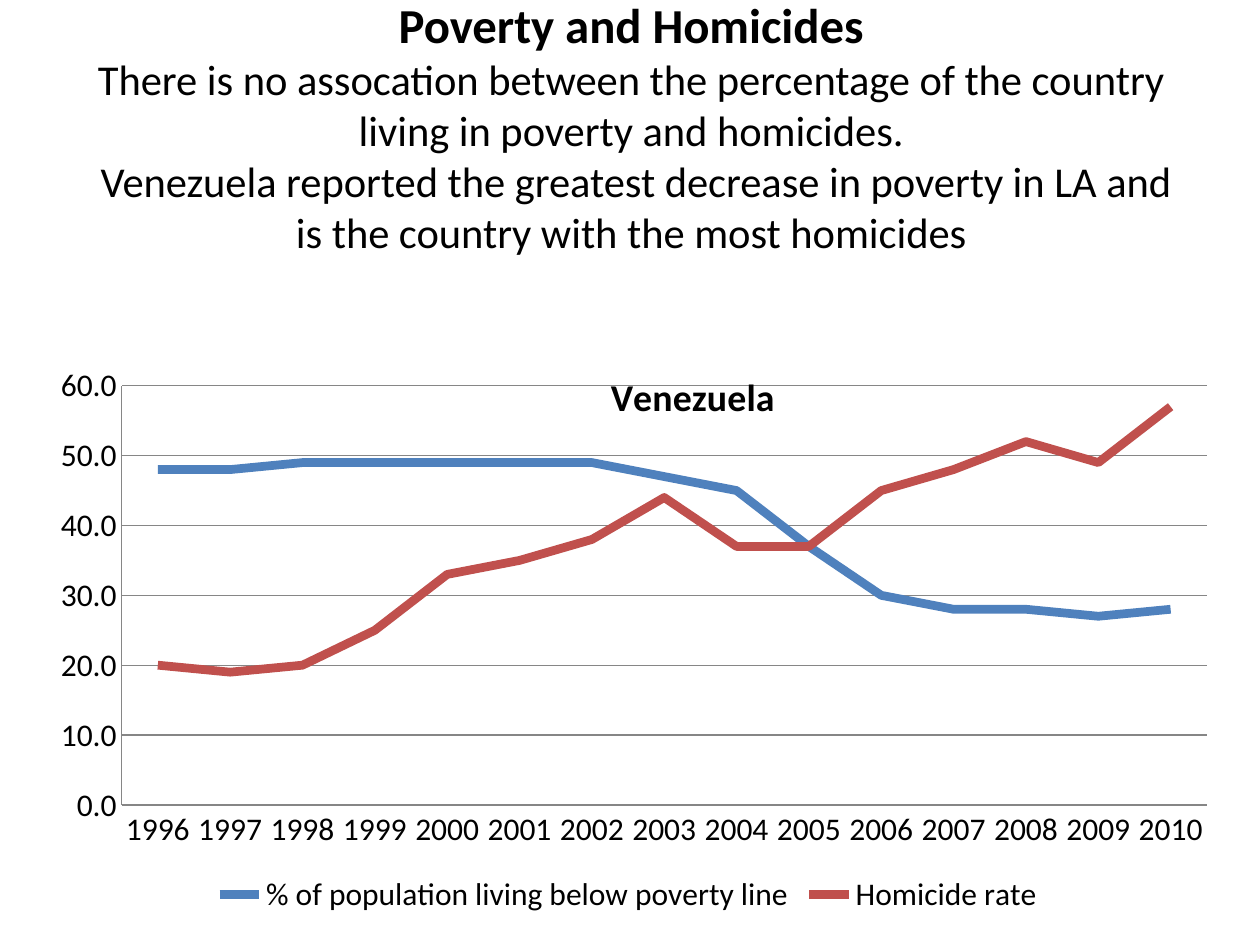
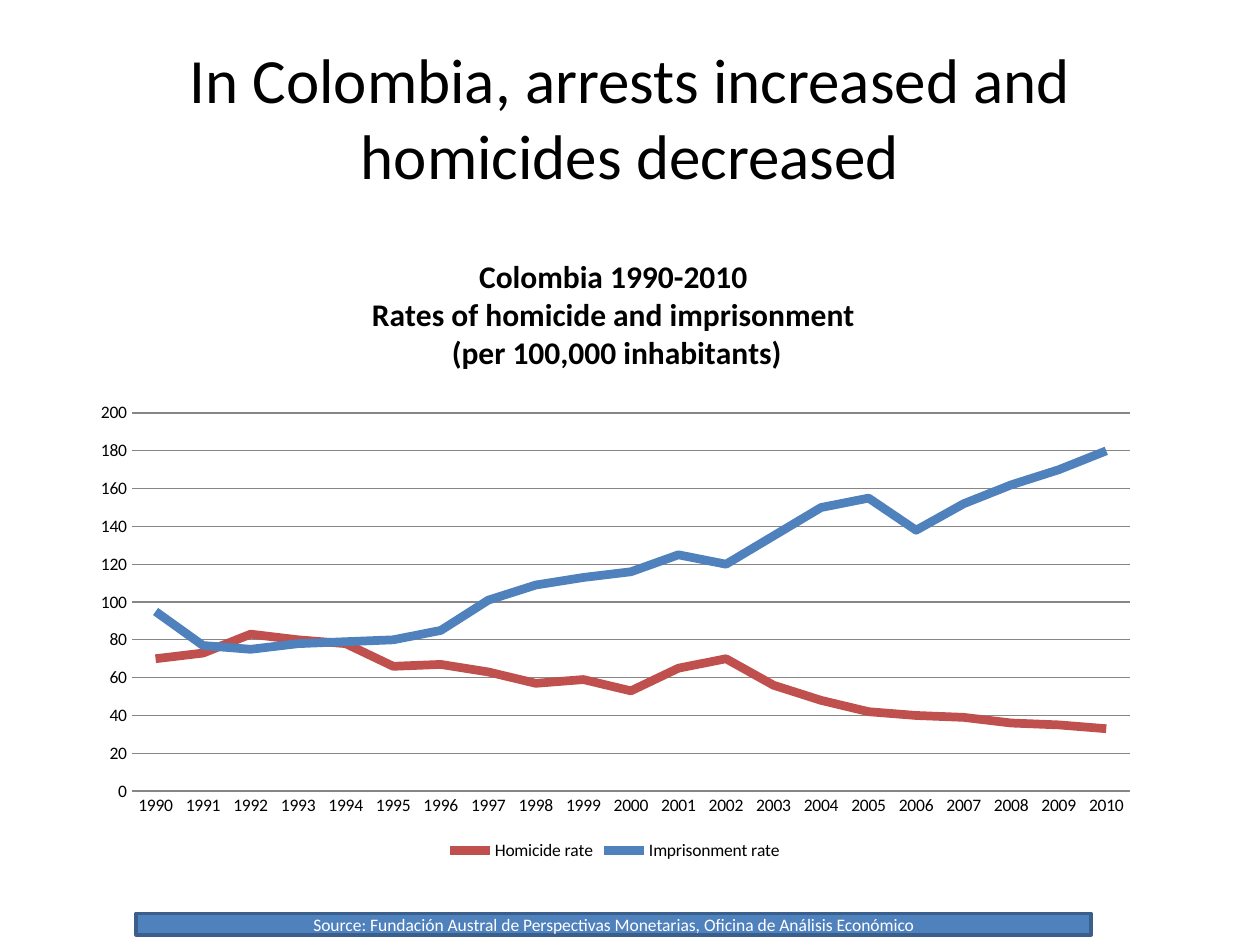
from lxml import etree
from pptx import Presentation
from pptx.chart.data import CategoryChartData
from pptx.dml.color import RGBColor
from pptx.enum.chart import (
    XL_CHART_TYPE, XL_LEGEND_POSITION, XL_MARKER_STYLE, XL_TICK_MARK)
from pptx.enum.shapes import MSO_SHAPE
from pptx.enum.text import MSO_ANCHOR, MSO_AUTO_SIZE, PP_ALIGN
from pptx.oxml.ns import qn
from pptx.util import Inches, Pt

LINE_CHART = XL_CHART_TYPE.LINE
LEGEND_BOTTOM = XL_LEGEND_POSITION.BOTTOM
NO_MARKER = XL_MARKER_STYLE.NONE
NO_TICKS = XL_TICK_MARK.NONE
RECTANGLE = MSO_SHAPE.RECTANGLE
MIDDLE = MSO_ANCHOR.MIDDLE
NO_AUTOFIT = MSO_AUTO_SIZE.NONE
CENTER = PP_ALIGN.CENTER

TITLE_ONLY = 5
FONT = "Calibri"
BLACK, WHITE, GRID = "000000", "FFFFFF", "868686"
BLUE, RED, DARK_BLUE = "4F81BD", "C0504D", "3A5F8C"


def color(hex_string):
    return RGBColor.from_string(hex_string)


def style_font(font, size, hex_color=BLACK, bold=False):
    font.name = FONT
    font.size = Pt(size)
    font.bold = bold
    font.color.rgb = color(hex_color)


def set_layout(parent, target=None, **fractions):
    """Place a chart part by x, y, w and h as fractions of the chart."""
    layout = parent.find(qn("c:layout"))
    if layout is None:
        layout = etree.Element(qn("c:layout"))
        parent.insert(0, layout)
    manual = etree.SubElement(layout, qn("c:manualLayout"))
    settings = [("layoutTarget", target)] if target else []
    settings += [("xMode", "edge"), ("yMode", "edge"), *fractions.items()]
    for name, value in settings:
        etree.SubElement(manual, qn(f"c:{name}")).set("val", str(value))


class Deck:
    """Holds the shared style and the current slide."""

    def __init__(self):
        self.presentation = Presentation()
        self.presentation.slide_width = Inches(10)
        self.presentation.slide_height = Inches(7.5)
        self.slide = None

    def add_slide(self):
        layout = self.presentation.slide_layouts[TITLE_ONLY]
        self.slide = self.presentation.slides.add_slide(layout)

    def add_title(self, lines, sizes, left, top, bold_first=False, bottom_margin=0.05):
        """Fill the title with one run per line, each in its own size."""
        title = self.slide.shapes.title
        title.left, title.top = Inches(left), Inches(top)
        title.width, title.height = Inches(9), Inches(1.25)
        frame = title.text_frame
        frame.word_wrap = True
        frame.auto_size = NO_AUTOFIT
        frame.vertical_anchor = MIDDLE
        frame.margin_bottom = Inches(bottom_margin)
        paragraph = frame.paragraphs[0]
        paragraph.text = "\v".join(lines)
        paragraph.alignment = CENTER
        for index, (run, size) in enumerate(zip(paragraph.runs, sizes)):
            style_font(run.font, size, bold=bold_first and index == 0)

    def add_line_chart(self, box, years, series, size, title, title_size, plot):
        """Series holds (name, color, values); plot holds the inner plot fractions."""
        data = CategoryChartData()
        data.categories = [str(year) for year in years]
        for name, _, values in series:
            data.add_series(name, values)
        frame = self.slide.shapes.add_chart(LINE_CHART, *map(Inches, box), data)
        chart = frame.chart
        style_font(chart.font, size)
        chart.has_legend = True
        chart.legend.position = LEGEND_BOTTOM
        chart.legend.include_in_layout = False
        style_font(chart.legend.font, size)

        chart.has_title = True
        title_frame = chart.chart_title.text_frame
        title_frame.text = title
        for paragraph in title_frame.paragraphs:
            for run in paragraph.runs:
                style_font(run.font, title_size, bold=True)

        chart.plots[0].vary_by_categories = False
        for line, (_, hex_color, _) in zip(chart.plots[0].series, series):
            line.smooth = False
            line.marker.style = NO_MARKER
            line.format.line.width = Pt(5)
            line.format.line.color.rgb = color(hex_color)
        set_layout(chart.element.find(".//" + qn("c:plotArea")), "inner", **plot)
        self.style_axes(chart)
        return chart

    def style_axes(self, chart):
        chart.value_axis.has_major_gridlines = True
        gridlines = chart.value_axis.major_gridlines
        for part in (chart.category_axis, chart.value_axis, gridlines):
            part.format.line.color.rgb = color(GRID)
            part.format.line.width = Pt(0.75)
        for axis in (chart.category_axis, chart.value_axis):
            axis.major_tick_mark = NO_TICKS
            axis.minor_tick_mark = NO_TICKS

    def set_scale(self, chart, maximum, step, number_format):
        axis = chart.value_axis
        axis.minimum_scale, axis.maximum_scale = 0, maximum
        axis.major_unit = step
        axis.tick_labels.number_format = number_format
        axis.tick_labels.number_format_is_linked = False

    def place_chart_title(self, chart, x, y, overlay=False):
        title = chart.element.find(".//" + qn("c:title"))
        set_layout(title, x=x, y=y)
        title.find(qn("c:overlay")).set("val", str(int(overlay)))

    def add_source_bar(self, text, left, top, width, height):
        bar = self.slide.shapes.add_shape(
            RECTANGLE, Inches(left), Inches(top), Inches(width), Inches(height))
        bar.shadow.inherit = False
        bar.fill.solid()
        bar.fill.fore_color.rgb = color(BLUE)
        bar.line.color.rgb = color(DARK_BLUE)
        bar.line.width = Pt(2)
        frame = bar.text_frame
        frame.word_wrap = True
        frame.vertical_anchor = MIDDLE
        paragraph = frame.paragraphs[0]
        paragraph.text = text
        paragraph.alignment = CENTER
        style_font(paragraph.runs[0].font, 10, WHITE)


def build_poverty_slide(deck):
    deck.add_slide()
    deck.add_title(
        ["Poverty and Homicides",
         "There is no assocation between the percentage of the country living in "
         "poverty and homicides.",
         " Venezuela reported the greatest decrease in poverty in LA and is the "
         "country with the most homicides"],
        [27.9, 24.3, 24.3], 0.51, 0.52, bold_first=True, bottom_margin=0.34)
    poverty = [48, 48, 49, 49, 49, 49, 49, 47, 45, 37, 30, 28, 28, 27, 28]
    homicides = [20, 19, 20, 25, 33, 35, 38, 44, 37, 37, 45, 48, 52, 49, 57]
    chart = deck.add_line_chart(
        (0.2, 2.1, 9.57, 5.2), range(1996, 2011),
        [("% of population living below poverty line", BLUE, poverty),
         ("Homicide rate", RED, homicides)],
        18, "Venezuela", 21.6, {"x": 0.08, "y": 0.185, "w": 0.9, "h": 0.64})
    deck.set_scale(chart, 60, 10, r"#\ ###\ ##0.0")
    deck.place_chart_title(chart, 0.48, 0.15, overlay=True)


def build_arrests_slide(deck):
    deck.add_slide()
    deck.add_title(["In Colombia, arrests increased and homicides decreased"],
                   [36], 0.5, 0.3)
    homicides = [70, 73, 83, 80, 78, 66, 67, 63, 57, 59, 53,
                 65, 70, 56, 48, 42, 40, 39, 36, 35, 33]
    imprisonment = [95, 77, 75, 78, 79, 80, 85, 101, 109, 113, 116,
                    125, 120, 135, 150, 155, 138, 152, 162, 170, 180]
    chart = deck.add_line_chart(
        (0.62, 1.95, 8.52, 4.92), range(1990, 2011),
        [("Homicide rate", RED, homicides),
         ("Imprisonment rate", BLUE, imprisonment)],
        10, "Colombia 1990-2010\nRates of homicide and imprisonment\n"
        " (per 100,000 inhabitants)",
        18, {"x": 0.05, "y": 0.27, "w": 0.93, "h": 0.61})
    deck.set_scale(chart, 200, 20, "General")
    deck.place_chart_title(chart, 0.27, 0.01)
    chart.value_axis.format.line.fill.background()
    deck.add_source_bar(
        "Source: Fundación Austral de Perspectivas Monetarias, "
        "Oficina de Análisis Económico", 1.08, 7.25, 7.58, 0.17)


def main():
    deck = Deck()
    build_poverty_slide(deck)
    build_arrests_slide(deck)
    deck.presentation.save("out.pptx")


if __name__ == "__main__":
    main()
